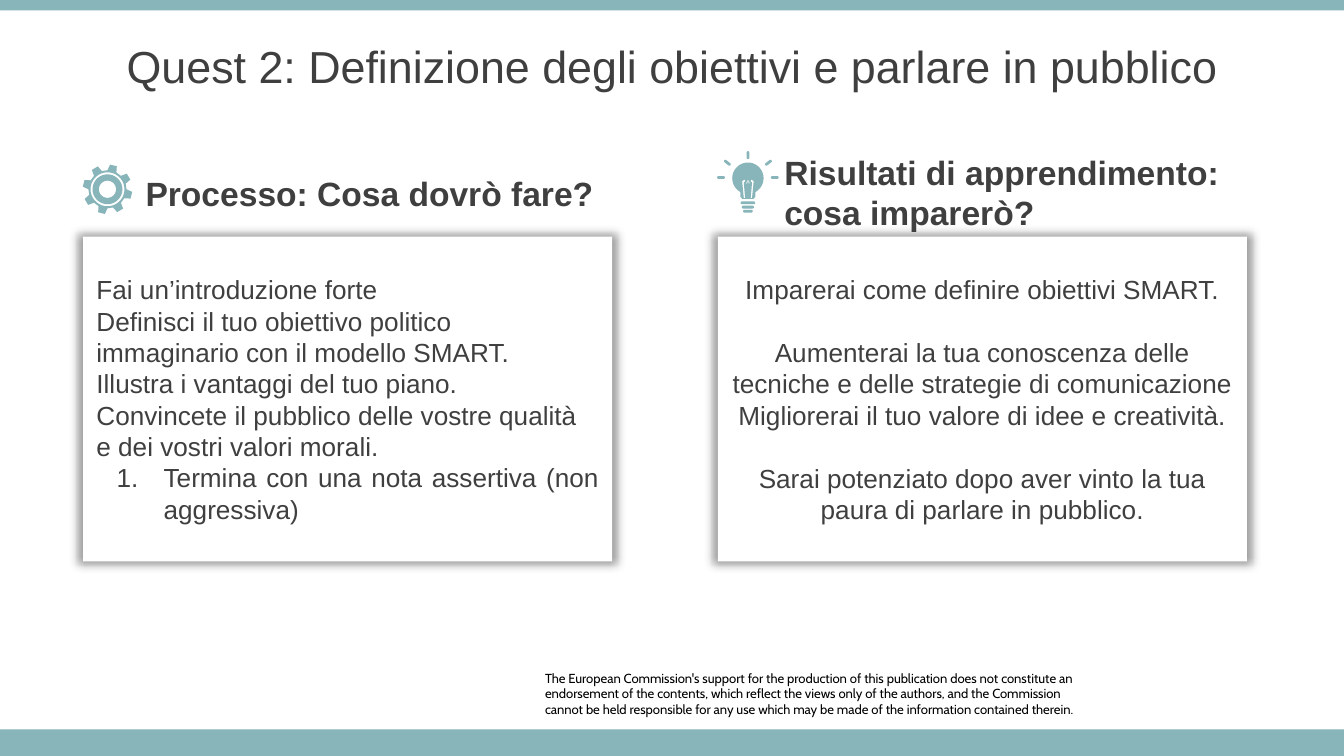
import math

import lxml.etree
import pptx
import pptx.dml.color
import pptx.enum.shapes
import pptx.enum.text
import pptx.oxml
import pptx.oxml.ns
import pptx.util

Pt = pptx.util.Pt
SHAPE = pptx.enum.shapes.MSO_SHAPE
ALIGN = pptx.enum.text.PP_ALIGN
ANCHOR = pptx.enum.text.MSO_ANCHOR
NS = pptx.oxml.ns.nsdecls("a")
TEAL, WHITE, GREY, BLACK = "87B5BA", "FFFFFF", "3F3F3F", "000000"


def paint(part, color):
    """Give a filled shape one plain colour, with no outline and no shadow."""
    part.fill.solid()
    part.fill.fore_color.rgb = pptx.dml.color.RGBColor.from_string(color)
    part.line.fill.background()
    part.shadow.inherit = False


def write(frame, lines, font, color=GREY, **paragraph_format):
    """Fill a text frame with one paragraph a line, all in one format."""
    frame.word_wrap = True
    for index, line in enumerate(lines):
        paragraph = frame.paragraphs[0] if index == 0 else frame.add_paragraph()
        paragraph.text = line
        for key, value in paragraph_format.items():
            setattr(paragraph, key, value)
        for key, value in font.items():
            setattr(paragraph.font, key, value)
        paragraph.font.color.rgb = pptx.dml.color.RGBColor.from_string(color)


deck = pptx.Presentation()
deck.slide_width, deck.slide_height = Pt(720), Pt(405)
slide = deck.slides.add_slide(deck.slide_layouts[5])
shapes = slide.shapes

# Bars at the top and bottom edges
for top, height in ((390.8, 14.2), (0, 5.6)):
    paint(shapes.add_shape(SHAPE.RECTANGLE, 0, Pt(top), Pt(720), Pt(height)), TEAL)

# Title
title = shapes.title
title.left, title.top, title.width, title.height = Pt(0), Pt(12.2), Pt(720), Pt(45.4)
title.text_frame.vertical_anchor = ANCHOR.MIDDLE
write(title.text_frame, ["Quest 2: Definizione degli obiettivi e parlare in pubblico"],
      {"name": "Arial", "size": Pt(24)}, alignment=ALIGN.CENTER)

# Gear: eight teeth around two concentric rings
gear_x, gear_y = 57.6, 101.4
teeth = [(radius, -76 + 45 * tooth + offset)
         for tooth in range(8)
         for radius, offset in ((10.2, -14), (13.3, -8), (13.3, 8), (10.2, 14))]
rings = [[(radius, angle) for angle in range(0, 360, 10)] for radius in (9.1, 8, 4.6)]
gear = [[(gear_x + radius * math.cos(math.radians(angle)),
          gear_y + radius * math.sin(math.radians(angle)))
         for radius, angle in contour] for contour in [teeth] + rings]

# Light bulb: glass with neck, filament cut out, then rays and socket rungs
bulb_x, bulb_y, bulb_radius = 400.7, 95.5, 8.4
glass = [(bulb_x + bulb_radius * math.cos(math.radians(angle)),
          bulb_y + bulb_radius * math.sin(math.radians(angle)))
         for angle in range(130, 411, 10)]
glass += [(bulb_x + dx, y) for dx, y in
          ((4, 103), (4, 105.4), (3, 106.6), (-3, 106.6), (-4, 105.4), (-4, 103))]
strand = [(-2.2, 106.2), (-3.1, 97), (-1.8, 96.2), (-0.9, 98), (0, 96.2),
          (0.9, 98), (1.8, 96.2), (3.1, 97), (2.2, 106.2)]
filament = [(bulb_x + dx, y) for dx, y in strand]
filament += [(bulb_x + 0.72 * dx, y + 0.8) for dx, y in reversed(strand[1:-1])]
filament.insert(len(strand), (bulb_x + 1.5, 106.2))
filament.append((bulb_x - 1.5, 106.2))
bulb = [glass, filament]

rays = [(-14.4, 95.1, 4.2, 0), (14.4, 95.1, 4.2, 0), (0, 83.1, 4.2, 90),
        (-11, 87.2, 4.2, 38), (11, 87.2, 4.2, -38)]
rungs = [(0, 108.7, 7.8, 0), (0, 111, 6.6, 0), (0, 113.2, 5.2, 0)]
cap = 0.75
for dx, y, length, tilt in rays + rungs:
    cos, sin = math.cos(math.radians(tilt)), math.sin(math.radians(tilt))
    rounded = []
    for end, start_angle in ((1, -90), (-1, 90)):
        for angle in range(start_angle, start_angle + 181, 30):
            along = end * (length / 2 - cap) + cap * math.cos(math.radians(angle))
            across = cap * math.sin(math.radians(angle))
            rounded.append((bulb_x + dx + along * cos - across * sin,
                            y + along * sin + across * cos))
    bulb.append(rounded)

for icon in (gear, bulb):
    contours = [[(Pt(x), Pt(y)) for x, y in contour] for contour in icon]
    outline = shapes.build_freeform(*contours[0][0], scale=1)
    outline.add_line_segments(contours[0][1:])
    for contour in contours[1:]:
        outline.move_to(*contour[0])
        outline.add_line_segments(contour[1:])
    paint(outline.convert_to_shape(), TEAL)

# Two columns: heading above a shadowed card
process = ["Fai un’introduzione forte",
           "Definisci il tuo obiettivo politico immaginario con il modello SMART.",
           "Illustra i vantaggi del tuo piano.",
           "Convincete il pubblico delle vostre qualità \ve dei vostri valori morali.",
           "Termina con una nota assertiva (non aggressiva)"]
results = ["Imparerai come definire obiettivi SMART.",
           "Aumenterai la tua conoscenza delle tecniche e delle strategie di comunicazione",
           "Migliorerai il tuo valore di idee e creatività.",
           "Sarai potenziato dopo aver vinto la tua paura di parlare in pubblico."]
columns = [(44.6, 70.9, 92.2, "Processo: Cosa dovrò fare?", process, ALIGN.LEFT),
           (384.6, 413.1, 91.6, "Risultati di apprendimento: cosa imparerò?",
            results, ALIGN.CENTER)]
cards = []
for card_left, heading_left, heading_top, heading_text, lines, alignment in columns:
    card = shapes.add_shape(SHAPE.RECTANGLE, Pt(card_left), Pt(126.8), Pt(283.4), Pt(174))
    paint(card, WHITE)
    effects = card._element.spPr.find(pptx.oxml.ns.qn("a:effectLst"))
    effects.append(pptx.oxml.parse_xml(
        f'<a:outerShdw {NS} blurRad="{Pt(5)}" sx="102000" sy="102000" algn="ctr" '
        f'rotWithShape="0"><a:srgbClr val="{BLACK}"><a:alpha val="40000"/></a:srgbClr>'
        '</a:outerShdw>'))
    card.text_frame.vertical_anchor = ANCHOR.MIDDLE
    write(card.text_frame, lines, {"name": "Arial", "size": Pt(14)}, alignment=alignment)
    cards.append(card)

    heading = shapes.add_textbox(Pt(heading_left), Pt(heading_top), Pt(256.3), Pt(22.3))
    heading.text_frame.vertical_anchor = ANCHOR.MIDDLE
    write(heading.text_frame, [heading_text],
          {"name": "Arial", "size": Pt(18), "bold": True})

# Numbered closing step on the left, one-line gaps on the right
closing_step = cards[0].text_frame.paragraphs[-1]
closing_step.alignment = ALIGN.JUSTIFY
numbering = closing_step._p.get_or_add_pPr()
numbering.set("marL", str(Pt(36)))
numbering.set("indent", str(-Pt(25.2)))
lxml.etree.SubElement(numbering, pptx.oxml.ns.qn("a:buFont"), typeface="Arial")
lxml.etree.SubElement(numbering, pptx.oxml.ns.qn("a:buAutoNum"), type="arabicPeriod")
# Bullet elements must come before the default run properties
numbering.append(numbering.find(pptx.oxml.ns.qn("a:defRPr")))
for index in (1, 3):
    cards[1].text_frame.paragraphs[index].space_before = Pt(16.9)

# Disclaimer
disclaimer = shapes.add_textbox(Pt(292), Pt(359), Pt(300.2), Pt(25.2)).text_frame
for side in ("left", "top", "right", "bottom"):
    setattr(disclaimer, f"margin_{side}", 0)
write(disclaimer,
      ["The European Commission's support for the production of this publication does not "
       "constitute an endorsement of the contents, which reflect the views only of the "
       "authors, and the Commission",
       "cannot be held responsible for any use which may be made of the information "
       "contained therein."],
      {"name": "Cabin", "size": Pt(7)}, color=BLACK)

deck.save("out.pptx")
